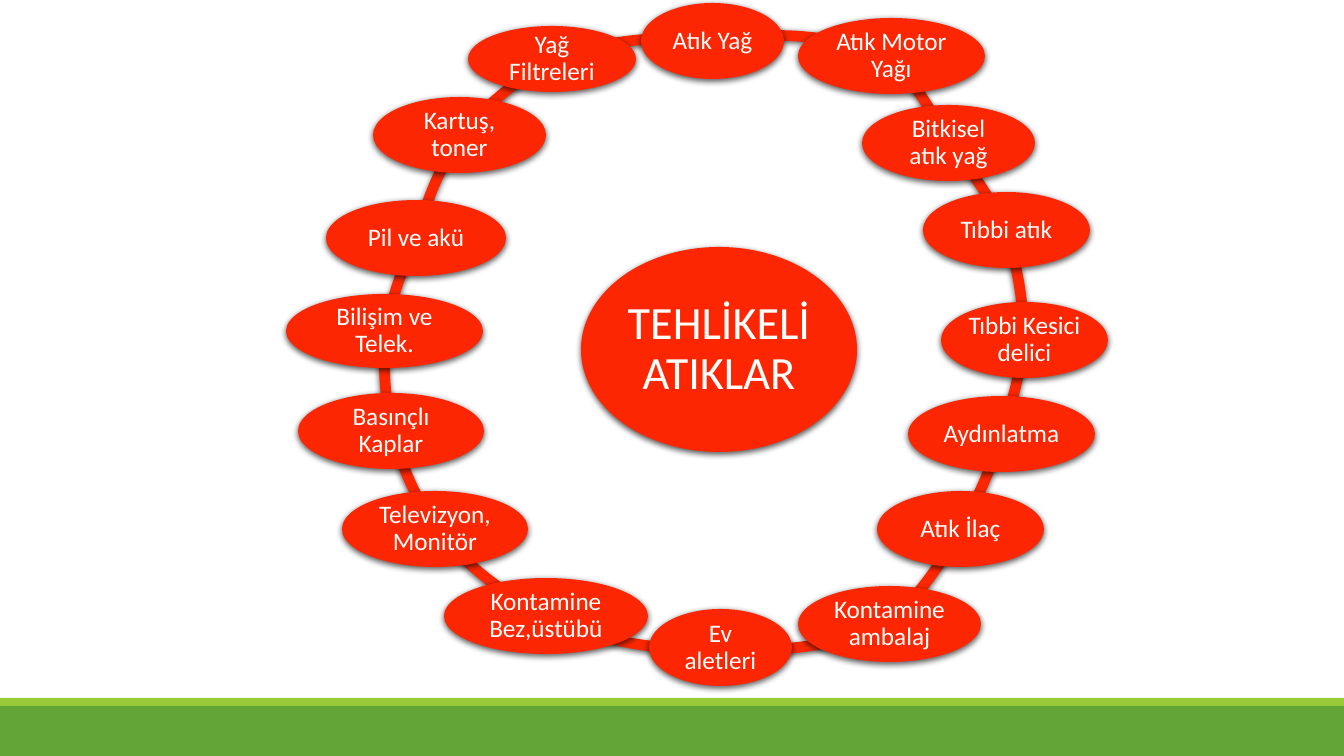
import math

import pptx
import pptx.dml.color
import pptx.enum.shapes
import pptx.enum.text
import pptx.oxml
import pptx.oxml.ns
import pptx.util

SHAPE = pptx.enum.shapes.MSO_SHAPE
COLORS = {"red": "FC2702", "green": "63A537", "lime": "99CB38",
          "white": "FFFFFF", "shadow": "000000"}
SLIDE_W, SLIDE_H = 1344, 756
RING_BOX = 628      # outer diameter of every ring segment
RING_RADIUS = 310   # radius on which neighbouring nodes are joined
RING_BAND = 0.017   # band thickness as a share of the diameter

# Clockwise from the top: text, left, top, width, height
NODES = [
    ("Atık Yağ", 641, 3, 143, 76),
    ("Atık Motor Yağı", 798, 18, 187, 76),
    ("Bitkisel atık yağ", 862, 105, 173, 76),
    ("Tıbbi atık", 923, 192, 167, 76),
    ("Tıbbi Kesici delici", 941, 302, 167, 76),
    ("Aydınlatma", 908, 396, 187, 76),
    ("Atık İlaç", 877, 491, 167, 76),
    ("Kontamine ambalaj", 798, 586, 183, 76),
    ("Ev aletleri", 649, 609, 143, 77),
    ("Kontamine Bez,üstübü", 444, 578, 204, 76),
    ("Televizyon, Monitör", 342, 491, 186, 76),
    ("Basınçlı Kaplar", 298, 393, 186, 76),
    ("Bilişim ve Telek.", 286, 294, 197, 74),
    ("Pil ve akü", 326, 200, 180, 76),
    ("Kartuş, toner", 373, 97, 173, 76),
    ("Yağ Filtreleri", 468, 26, 168, 66),
]


class Deck:
    font = "Calibri"

    def __init__(self):
        self.prs = pptx.Presentation()
        self.prs.slide_width = self.px(SLIDE_W)
        self.prs.slide_height = self.px(SLIDE_H)
        self.s = self.prs.slides.add_slide(self.prs.slide_layouts[6])

    def px(self, n):
        return pptx.util.Emu(round(n * 914400 / 100.8))

    def color(self, name):
        return pptx.dml.color.RGBColor.from_string(COLORS[name])

    def shape(self, kind, x, y, w, h, fill, shadow=False):
        sp = self.s.shapes.add_shape(kind, *map(self.px, (x, y, w, h)))
        sp.fill.solid()
        sp.fill.fore_color.rgb = self.color(fill)
        sp.line.fill.background()
        sp.shadow.inherit = False
        if shadow:
            effects = sp._element.spPr.find(pptx.oxml.ns.qn("a:effectLst"))
            effects.append(pptx.oxml.parse_xml(
                f'<a:outerShdw {pptx.oxml.ns.nsdecls("a")} blurRad="57150" dist="19050" '
                f'dir="5400000" algn="ctr" rotWithShape="0"><a:srgbClr val="{COLORS["shadow"]}">'
                '<a:alpha val="63000"/></a:srgbClr></a:outerShdw>'))
        return sp

    def ellipse(self, text, x, y, w, h, size=18, inset=3):
        sp = self.shape(SHAPE.OVAL, x, y, w, h, "red", shadow=True)
        tf = sp.text_frame
        tf.word_wrap = True
        tf.vertical_anchor = pptx.enum.text.MSO_ANCHOR.MIDDLE
        tf.margin_left = tf.margin_right = self.px(inset)
        tf.margin_top = tf.margin_bottom = self.px(inset)
        p = tf.paragraphs[0]
        p.text = text
        p.alignment = pptx.enum.text.PP_ALIGN.CENTER
        p.line_spacing = 0.9
        p.font.name = self.font
        p.font.size = pptx.util.Pt(size)
        p.font.color.rgb = self.color("white")

    def arc(self, start, end):
        """Join two points clockwise with a segment of the ring."""
        (x1, y1), (x2, y2) = start, end
        dx, dy = x2 - x1, y2 - y1
        chord = math.hypot(dx, dy)
        depth = math.sqrt(RING_RADIUS ** 2 - (chord / 2) ** 2) / chord
        cx = (x1 + x2) / 2 - dy * depth
        cy = (y1 + y2) / 2 + dx * depth
        sp = self.shape(SHAPE.BLOCK_ARC, cx - RING_BOX / 2, cy - RING_BOX / 2,
                        RING_BOX, RING_BOX, "red", shadow=True)
        for i, (x, y) in enumerate((start, end)):
            degrees = math.degrees(math.atan2(y - cy, x - cx)) % 360
            sp.adjustments[i] = degrees * 0.6  # 60000 units a degree, over 100000
        sp.adjustments[2] = RING_BAND


def main():
    deck = Deck()

    # Footer bands
    deck.shape(SHAPE.RECTANGLE, 0, 706, SLIDE_W, 50, "green")
    deck.shape(SHAPE.RECTANGLE, 0, 698, SLIDE_W, 8, "lime")

    # Ring segments between neighbouring nodes
    centres = [(x + w / 2, y + h / 2) for _, x, y, w, h in NODES]
    for i in range(len(centres), 0, -1):
        deck.arc(centres[i - 1], centres[i % len(centres)])

    # Hub and nodes
    deck.ellipse("TEHLİKELİ ATIKLAR", 581, 247, 276, 205, size=33, inset=5)
    for node in NODES:
        deck.ellipse(*node)

    deck.prs.save("out.pptx")


if __name__ == "__main__":
    main()
